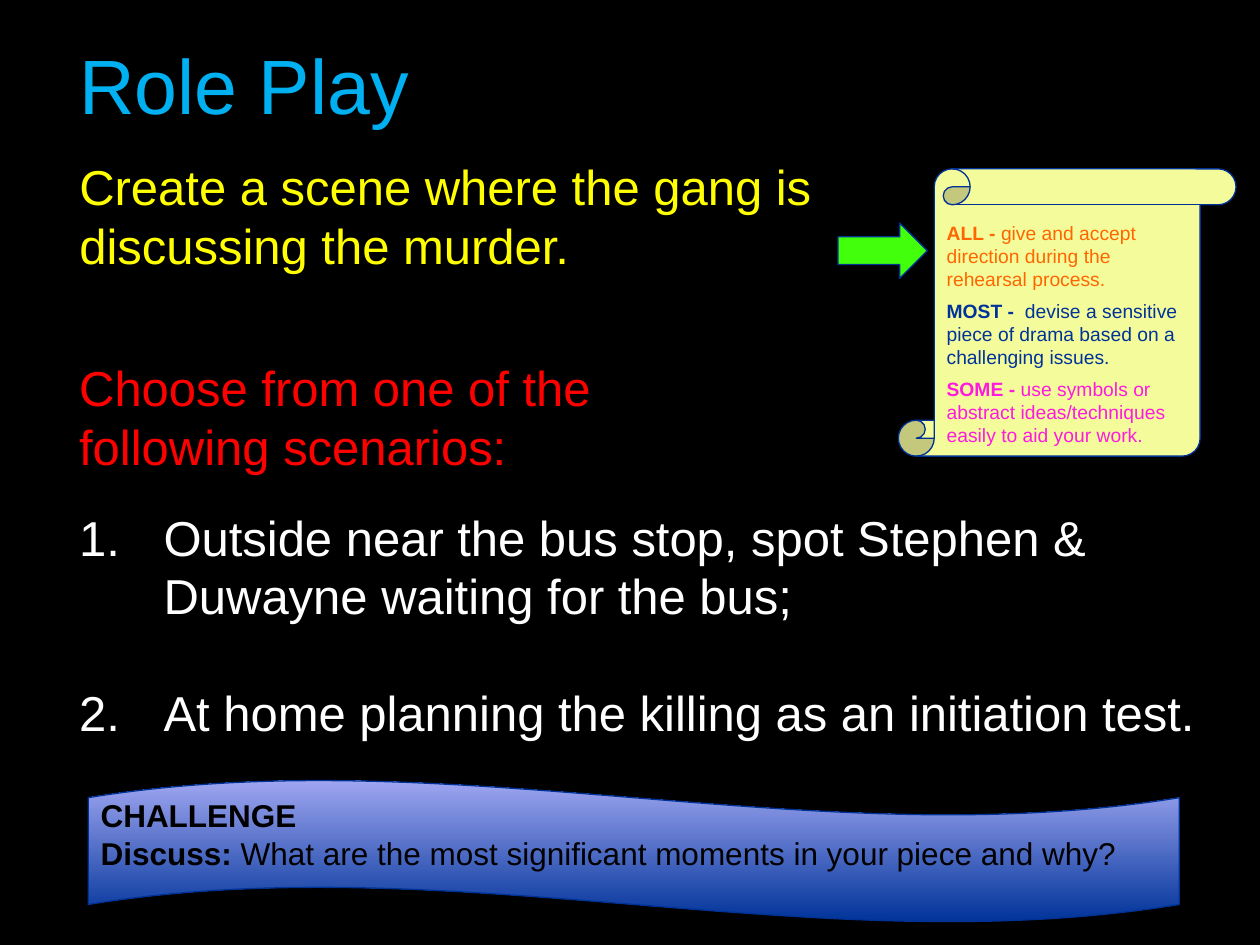
from lxml.etree import SubElement
from pptx import Presentation
from pptx.dml.color import RGBColor
from pptx.enum.shapes import MSO_SHAPE
from pptx.enum.text import MSO_ANCHOR, MSO_AUTO_SIZE, PP_ALIGN
from pptx.oxml.ns import qn
from pptx.util import Inches, Pt

FONT = "Arial"
BLACK = RGBColor(0x00, 0x00, 0x00)
WHITE = RGBColor(0xFF, 0xFF, 0xFF)
SKY = RGBColor(0x00, 0xB0, 0xF0)
YELLOW = RGBColor(0xFF, 0xFF, 0x00)
RED = RGBColor(0xFF, 0x00, 0x00)
ORANGE = RGBColor(0xFF, 0x66, 0x00)
NAVY = RGBColor(0x00, 0x33, 0x99)
MAGENTA = RGBColor(0xFF, 0x1A, 0xE0)
OUTLINE = RGBColor(0x00, 0x32, 0x96)
PARCHMENT = RGBColor(0xF4, 0xFB, 0x9B)
GREEN = RGBColor(0x42, 0xFF, 0x0C)
LAVENDER = RGBColor(0x9F, 0xA6, 0xF1)

# Content
TITLE = "Role Play"
TASK = "Create a scene where the gang is discussing the murder."
PROMPT = ["Choose from one of the", "following scenarios:"]
# Scenario and the space before it in points
SCENARIOS = [
    ("Outside near the bus stop, spot Stephen & Duwayne waiting for the bus;", 18),
    ("At home planning the killing as an initiation test.", 33),
]
# Bold lead, plain text, colour
OBJECTIVES = [
    ("ALL - ", "give and accept direction during the rehearsal process.", ORANGE),
    ("MOST -  ", "devise a sensitive piece of drama based on a challenging issues.", NAVY),
    ("SOME - ", "use symbols or abstract ideas/techniques easily to aid your work.", MAGENTA),
]
CHALLENGE = [
    ("CHALLENGE", ""),
    ("Discuss: ", "What are the most significant moments in your piece and why?"),
]


def place(shape, left, top, width, height):
    shape.left, shape.top = Inches(left), Inches(top)
    shape.width, shape.height = Inches(width), Inches(height)


def prepare_frame(shape, anchor=MSO_ANCHOR.TOP):
    frame = shape.text_frame
    frame.word_wrap = True
    frame.auto_size = MSO_AUTO_SIZE.NONE
    frame.vertical_anchor = anchor
    return frame


def add_paragraph(frame, runs, size, color, before=0):
    """Add (text, bold) runs; the first call fills the empty first paragraph."""
    first = frame.paragraphs[0]
    paragraph = frame.add_paragraph() if first.runs else first
    paragraph.alignment = PP_ALIGN.LEFT
    paragraph.space_before = Pt(before)
    for text, bold in runs:
        if text:
            run = paragraph.add_run()
            run.text = text
            run.font.name = FONT
            run.font.size = Pt(size)
            run.font.bold = bold
            run.font.color.rgb = color
    return paragraph


def set_bullet(paragraph, indent, tag, **attributes):
    properties = paragraph._p.get_or_add_pPr()
    properties.set("marL", str(Inches(indent)))
    properties.set("indent", str(-Inches(indent)))
    SubElement(properties, qn(tag), attributes)


def add_outlined_shape(slide, kind, left, top, width, height):
    shape = slide.shapes.add_shape(
        kind, Inches(left), Inches(top), Inches(width), Inches(height))
    shape.shadow.inherit = False
    shape.line.color.rgb = OUTLINE
    shape.line.width = Pt(0.75)
    return shape


def main():
    presentation = Presentation()
    presentation.slide_width, presentation.slide_height = Inches(10), Inches(7.5)
    slide = presentation.slides.add_slide(presentation.slide_layouts[1])
    slide.background.fill.solid()
    slide.background.fill.fore_color.rgb = BLACK

    # Title and task
    title, body = slide.placeholders
    place(title, 0.53, 0.04, 9, 1.25)
    add_paragraph(prepare_frame(title, MSO_ANCHOR.MIDDLE), [(TITLE, False)], 44, SKY)
    place(body, 0.53, 1.19, 7.48, 1.3)
    task = add_paragraph(prepare_frame(body), [(TASK, False)], 28, YELLOW)
    set_bullet(task, 0, "a:buNone")

    # Scroll with the objectives
    scroll = add_outlined_shape(slide, MSO_SHAPE.VERTICAL_SCROLL, 7.13, 1.34, 2.68, 2.28)
    scroll.fill.solid()
    scroll.fill.fore_color.rgb = PARCHMENT
    frame = prepare_frame(scroll)
    frame.margin_top = Inches(0.13)
    for index, (lead, text, color) in enumerate(OBJECTIVES):
        add_paragraph(frame, [(lead, True), (text, False)], 11, color, 5 if index else 0)

    # Scenarios
    box = slide.shapes.add_textbox(Inches(0.53), Inches(2.32), Inches(9.11), Inches(3.65))
    frame = prepare_frame(box)
    frame.margin_top = Inches(0.52)
    for line in PROMPT:
        add_paragraph(frame, [(line, False)], 28, RED)
    for text, before in SCENARIOS:
        scenario = add_paragraph(frame, [(text, False)], 28, WHITE, before)
        set_bullet(scenario, 0.67, "a:buAutoNum", type="arabicPeriod")

    # Challenge banner
    banner = add_outlined_shape(slide, MSO_SHAPE.WAVE, 0.7, 6.19, 8.66, 1.13)
    banner.fill.gradient()
    banner.fill.gradient_angle = 90
    for stop, position, color in zip(banner.fill.gradient_stops, (0, 1), (NAVY, LAVENDER)):
        stop.position = position
        stop.color.rgb = color
    frame = prepare_frame(banner, MSO_ANCHOR.MIDDLE)
    frame.margin_bottom = Inches(0.32)
    for lead, text in CHALLENGE:
        add_paragraph(frame, [(lead, True), (text, False)], 18, BLACK)

    # Arrow to the objectives
    arrow = add_outlined_shape(slide, MSO_SHAPE.RIGHT_ARROW, 6.65, 1.77, 0.71, 0.44)
    arrow.fill.solid()
    arrow.fill.fore_color.rgb = GREEN

    presentation.save("out.pptx")


if __name__ == "__main__":
    main()
